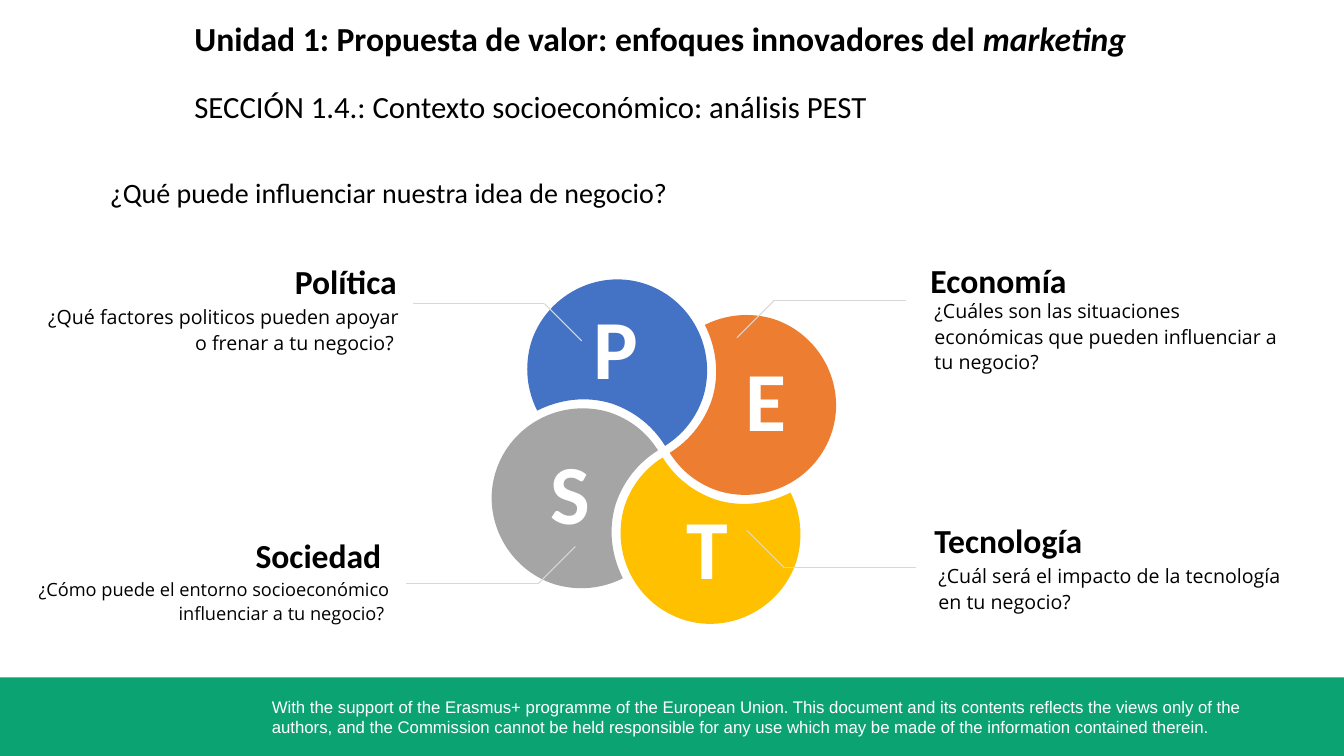
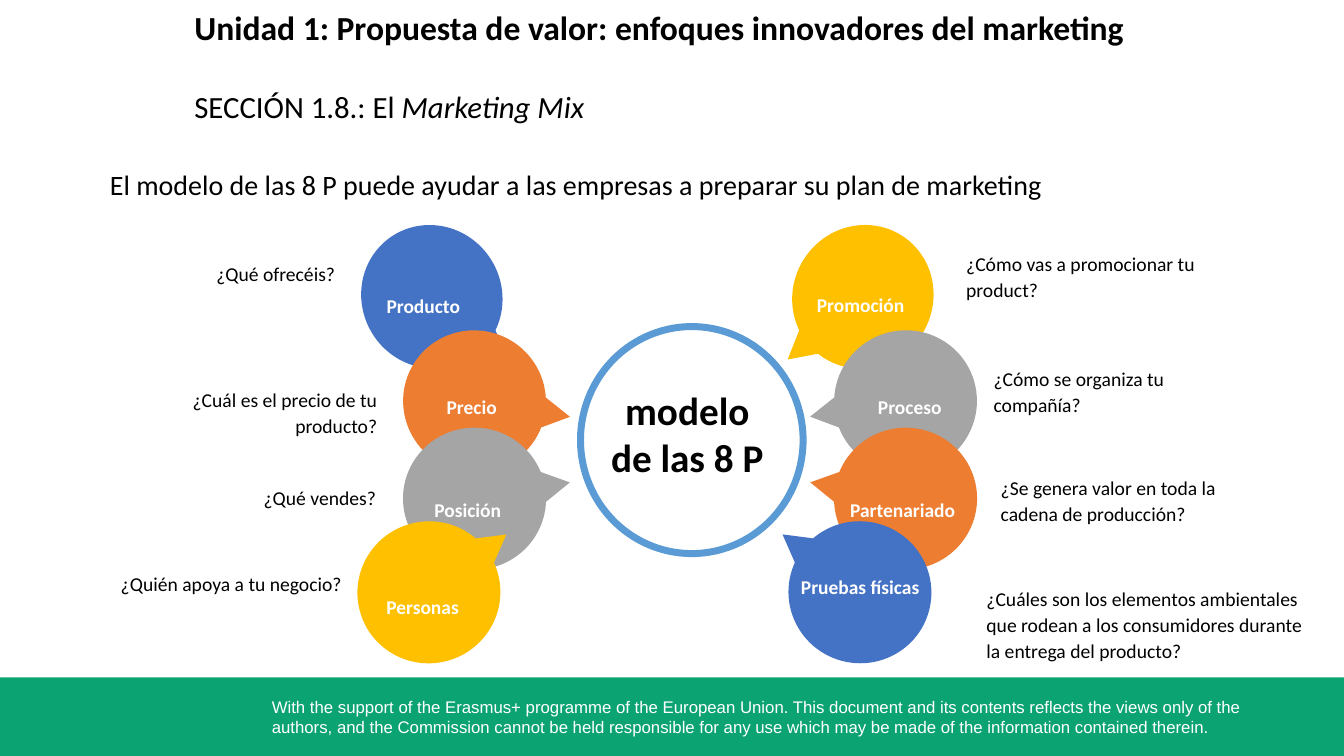
from dataclasses import dataclass

from lxml.etree import SubElement
from pptx import Presentation
from pptx.dml.color import RGBColor
from pptx.enum.shapes import MSO_CONNECTOR, MSO_SHAPE
from pptx.enum.text import MSO_AUTO_SIZE, PP_ALIGN
from pptx.oxml.ns import qn
from pptx.shapes.autoshape import Shape
from pptx.slide import Slide
from pptx.util import Cm, Pt


@dataclass(frozen=True)
class Theme:
    black: str = "000000"
    white: str = "FFFFFF"
    green: str = "0CA373"
    blue: str = "4472C4"
    orange: str = "ED7D31"
    yellow: str = "FFC000"
    gray: str = "A5A5A5"
    ring: str = "5B9BD5"
    leader: str = "D8D8D8"
    heading_size: float = 24
    section_size: float = 22
    lead_size: float = 20
    body_size: float = 14
    small_size: float = 13
    footer_size: float = 12
    letter_size: float = 60
    center_size: float = 28
    leader_width: float = 0.75
    outline_width: float = 5


THEME = Theme()


@dataclass(frozen=True)
class Box:
    left: float
    top: float
    width: float
    height: float

    def lengths(self) -> tuple[Cm, ...]:
        return tuple(Cm(value) for value in (self.left, self.top, self.width, self.height))


@dataclass(frozen=True)
class TextStyle:
    size: float
    color: str = THEME.black
    bold: bool = False
    font: str = "Calibri"
    align: PP_ALIGN = PP_ALIGN.LEFT
    line_spacing: float | None = None
    grow: bool = True
    raised: bool = False
    flush: bool = False


@dataclass(frozen=True)
class Words:
    text: str
    italic: bool = False


@dataclass(frozen=True)
class Header:
    title: tuple[Words, ...]
    title_top: float
    section: tuple[Words, ...]
    lead: str
    lead_top: float


@dataclass(frozen=True)
class Factor:
    """One PEST petal with its letter, leader line, heading and question."""
    letter: str
    color: str
    letter_at: tuple[float, float]
    tip: tuple[float, float]
    direction: tuple[int, int]
    heading: str
    heading_box: Box
    question: str
    question_at: tuple[float, float]
    question_size: float = THEME.body_size


@dataclass(frozen=True)
class Callout:
    left: float
    top: float
    rotation: float
    left_color: str
    right_color: str
    width: float = 3.4
    height: float = 3.43


@dataclass(frozen=True)
class Element:
    """One of the eight P: a label on its callout and a question beside it."""
    label: str
    label_at: tuple[float, float]
    question: str
    question_at: tuple[float, float]
    align: PP_ALIGN = PP_ALIGN.LEFT
    question_width: float = 6.76


TITLE = TextStyle(THEME.heading_size, bold=True, flush=True)
SECTION = TextStyle(THEME.section_size, flush=True)
LEAD = TextStyle(THEME.lead_size)
FOOTER = TextStyle(THEME.footer_size, THEME.white, font="Arial")
LETTER = TextStyle(THEME.letter_size, THEME.white, bold=True, align=PP_ALIGN.CENTER)
LABEL = TextStyle(THEME.heading_size, THEME.white, bold=True, align=PP_ALIGN.CENTER, raised=True)
CENTER = TextStyle(THEME.center_size, bold=True, align=PP_ALIGN.CENTER)

FOOTER_TEXT = (
    "With the support of the Erasmus+ programme of the European Union. This document and its "
    "contents reflects the views only of the authors, and the Commission cannot be held "
    "responsible for any use which may be made of the information contained therein."
)

PEST_HEADER = Header(
    (Words("Unidad 1: Propuesta de valor: enfoques innovadores del "), Words("marketing", True)), 0.41,
    (Words("SECCIÓN 1.4.: Contexto socioeconómico: análisis PEST"),),
    "¿Qué puede influenciar nuestra idea de negocio?", 4.29,
)
MIX_HEADER = Header(
    (Words("Unidad 1: Propuesta de valor: enfoques innovadores del marketing"),), 0.13,
    (Words("SECCIÓN 1.8.: El "), Words("Marketing Mix", True)),
    "El modelo de las 8 P puede ayudar a las empresas a preparar su plan de marketing", 4.09,
)

# Clockwise, a quarter turn apart.
FACTORS = (
    Factor("P", THEME.blue, (14, 7.32), (14.66, 8.59), (-1, -1),
           "Política", Box(6.92, 6.45, 3.33, 1.27),
           "¿Qué factores politicos pueden apoyar o frenar a tu negocio? ", (0.86, 7.5)),
    Factor("E", THEME.orange, (17.78, 8.62), (18.57, 8.51), (1, -1),
           "Economía", Box(23.2, 6.43, 4.72, 1.27),
           "¿Cuáles son las situaciones económicas que pueden influenciar a tu negocio?", (23.3, 7.34)),
    Factor("T", THEME.yellow, (16.31, 12.35), (18.82, 13.36), (1, 1),
           "Tecnología", Box(23.3, 12.98, 5.28, 1.27),
           "¿Cuál será el impacto de la tecnología en tu negocio?", (23.4, 14.02)),
    Factor("S", THEME.gray, (12.85, 10.97), (14.5, 13.77), (-1, 1),
           "Sociedad", Box(5.95, 13.36, 3.91, 1.27),
           "¿Cómo puede el entorno socioeconómico influenciar a tu negocio? ", (0.6, 14.4),
           THEME.small_size),
)
FLOWER_CENTER = (16.73, 11.37)
FIRST_PETAL_OFFSET = (-1.12, -2.27)
FIRST_PETAL_ROTATION = 323.2
PETAL_START = (-0.79, 0.74)
# Each row holds two control points and the end of one curve, from the petal's centre.
PETAL_CURVES = (
    ((-0.44, 1.25), (-0.3, 1.83), (-0.35, 2.4)),
    ((0.17, 2.44), (0.69, 2.32), (1.17, 1.98)),
    ((2.17, 1.23), (2.4, -0.18), (1.67, -1.2)),
    ((0.94, -2.21), (-0.49, -2.42), (-1.49, -1.71)),
    ((-2, -1.33), (-2.3, -0.8), (-2.4, -0.24)),
    ((-1.79, -0.13), (-1.2, 0.18), PETAL_START),
)
LEADER_SLANT = 0.94
LEADER_LENGTH = 3.32

CALLOUTS = (
    Callout(20.07, 5.74, 32.4, THEME.blue, THEME.yellow, 3.35, 3.48),
    Callout(21.12, 8.4, 62.6, THEME.orange, THEME.gray),
    Callout(21.12, 10.85, 81.4, THEME.gray, THEME.orange),
    Callout(19.97, 13.21, 108.5, THEME.yellow, THEME.blue),
)
CALLOUT_SHIFT = 10.86
CALLOUT_TAIL = (0.208, 0.625)

ELEMENTS = (
    Element("Producto", (8.89, 7.19), "¿Qué ofrecéis?", (1.94, 6.41), PP_ALIGN.RIGHT),
    Element("Precio", (10.11, 9.73), "¿Cuál es el precio de tu producto?", (3, 9.6), PP_ALIGN.RIGHT),
    Element("Posición", (10.01, 12.32), "¿Qué vendes?", (2.97, 12.07), PP_ALIGN.RIGHT),
    Element("Personas", (8.87, 14.78), "¿Quién apoya a tu negocio?", (2.11, 14.22), PP_ALIGN.RIGHT),
    Element("Promoción", (19.91, 7.16), "¿Cómo vas a promocionar tu product?", (24.1, 6.16)),
    Element("Proceso", (21.15, 9.73), "¿Cómo se organiza tu compañía?", (24.79, 9.07)),
    Element("Partenariado", (20.97, 12.32),
            "¿Se genera valor en toda la cadena de producción?", (24.97, 11.81)),
    Element("Pruebas físicas", (19.9, 14.27),
            "¿Cuáles son los elementos ambientales que rodean a los consumidores "
            "durante la entrega del producto?", (24.61, 14.61), question_width=8.64),
)


def set_attributes(target: object, values: dict[str, object]) -> None:
    for name, value in values.items():
        setattr(target, name, value)


def add_text(slide: Slide, box: Box, content: str | tuple[Words, ...], style: TextStyle) -> None:
    frame = slide.shapes.add_textbox(*box.lengths()).text_frame
    auto_size = MSO_AUTO_SIZE.SHAPE_TO_FIT_TEXT if style.grow else MSO_AUTO_SIZE.NONE
    set_attributes(frame, {"word_wrap": True, "auto_size": auto_size})
    if style.flush:
        set_attributes(frame, {"margin_left": 0, "margin_right": 0,
                               "margin_top": Cm(0.04), "margin_bottom": 0})
    paragraph = frame.paragraphs[0]
    set_attributes(paragraph, {"alignment": style.align, "line_spacing": style.line_spacing})
    for words in (Words(content),) if isinstance(content, str) else content:
        run = paragraph.add_run()
        run.text = words.text
        set_attributes(run.font, {"name": style.font, "size": Pt(style.size),
                                  "bold": style.bold, "italic": words.italic})
        run.font.color.rgb = RGBColor.from_string(style.color)
        if style.raised:
            run._r.get_or_add_rPr().set("baseline", "30000")


def paint(shape: Shape, fill: str, outline: str | None = None) -> None:
    shape.shadow.inherit = False
    shape.fill.solid()
    shape.fill.fore_color.rgb = RGBColor.from_string(fill)
    if outline is None:
        shape.line.fill.background()
    else:
        shape.line.color.rgb = RGBColor.from_string(outline)
        shape.line.width = Pt(THEME.outline_width)
        SubElement(shape._element.spPr.find(qn("a:ln")), qn("a:miter"), lim="800000")


def add_line(slide: Slide, start: tuple[float, float], end: tuple[float, float]) -> None:
    line = slide.shapes.add_connector(MSO_CONNECTOR.STRAIGHT, *(Cm(value) for value in start + end))
    line.line.color.rgb = RGBColor.from_string(THEME.leader)
    line.line.width = Pt(THEME.leader_width)
    SubElement(line._element.spPr, qn("a:effectLst"))


def curve_segments(shape: Shape) -> None:
    """Turn each three straight segments of a freeform into one cubic curve."""
    segments = list(shape._element.iter(qn("a:lnTo")))
    for first in range(0, len(segments), 3):
        curve = segments[first].makeelement(qn("a:cubicBezTo"))
        segments[first].addprevious(curve)
        for segment in segments[first:first + 3]:
            curve.append(segment[0])
            segment.getparent().remove(segment)


def add_petal(slide: Slide, center: tuple[float, float], rotation: float, color: str) -> None:
    builder = slide.shapes.build_freeform(*(Cm(value) for value in PETAL_START))
    builder.add_line_segments([(Cm(x), Cm(y)) for curve in PETAL_CURVES for x, y in curve], close=True)
    petal = builder.convert_to_shape(*(Cm(value) for value in center))
    curve_segments(petal)
    petal.rotation = rotation
    paint(petal, color)


def add_frame(slide: Slide, header: Header) -> None:
    """Add the footer band and the headings that every slide has."""
    band = slide.shapes.add_shape(MSO_SHAPE.RECTANGLE, *Box(0, 17.07, 33.87, 1.98).lengths())
    paint(band, THEME.green)
    add_text(slide, Box(6.6, 17.42, 26.47, 1.27), FOOTER_TEXT, FOOTER)
    add_text(slide, Box(4.9, 2.18, 26.52, 0.99), header.section, SECTION)
    add_text(slide, Box(4.9, header.title_top, 28.9, 1.07), header.title, TITLE)
    add_text(slide, Box(2.52, header.lead_top, 26.11, 1.12), header.lead, LEAD)


def add_pest(slide: Slide) -> None:
    across, down = FIRST_PETAL_OFFSET
    for index, factor in enumerate(FACTORS):
        center = (FLOWER_CENTER[0] + across, FLOWER_CENTER[1] + down)
        add_petal(slide, center, (FIRST_PETAL_ROTATION + 90 * index) % 360, factor.color)
        across, down = -down, across
    for factor in FACTORS:
        add_text(slide, Box(*factor.letter_at, 3.05, 2.82), factor.letter, LETTER)
        horizontal, vertical = factor.direction
        elbow = (factor.tip[0] + LEADER_SLANT * horizontal, factor.tip[1] + LEADER_SLANT * vertical)
        add_line(slide, factor.tip, elbow)
        add_line(slide, elbow, (elbow[0] + LEADER_LENGTH * horizontal, elbow[1]))
        align = PP_ALIGN.RIGHT if horizontal < 0 else PP_ALIGN.LEFT
        add_text(slide, Box(*factor.question_at, 9.45, 2.03), factor.question,
                 TextStyle(factor.question_size, font="Open Sans", align=align,
                           line_spacing=1.1, grow=False))
        add_text(slide, factor.heading_box, factor.heading,
                 TextStyle(THEME.heading_size, bold=True, align=align))


def add_callout(slide: Slide, callout: Callout, mirrored: bool) -> None:
    left = callout.left - CALLOUT_SHIFT if mirrored else callout.left
    box = Box(left, callout.top, callout.width, callout.height)
    shape = slide.shapes.add_shape(MSO_SHAPE.OVAL_CALLOUT, *box.lengths())
    shape.adjustments[0] = CALLOUT_TAIL[0] if mirrored else -CALLOUT_TAIL[0]
    shape.adjustments[1] = CALLOUT_TAIL[1]
    shape.rotation = 360 - callout.rotation if mirrored else callout.rotation
    color = callout.left_color if mirrored else callout.right_color
    paint(shape, color, color)


def add_marketing_mix(slide: Slide) -> None:
    ring = slide.shapes.add_shape(MSO_SHAPE.OVAL, *Box(14.63, 8.23, 5.61, 5.72).lengths())
    paint(ring, THEME.white, THEME.ring)
    for mirrored in (False, True):
        for callout in CALLOUTS:
            add_callout(slide, callout, mirrored)
    for element in ELEMENTS:
        add_text(slide, Box(*element.label_at, 3.56, 0.94), element.label, LABEL)
        add_text(slide, Box(*element.question_at, element.question_width, 1.47), element.question,
                 TextStyle(THEME.body_size, align=element.align, line_spacing=1.1, grow=False))
    add_text(slide, Box(15.06, 9.6, 4.52, 2.64), "modelo de las 8 P", CENTER)


def main() -> None:
    presentation = Presentation()
    set_attributes(presentation, {"slide_width": Cm(33.87), "slide_height": Cm(19.05)})
    for header, add_content in ((PEST_HEADER, add_pest), (MIX_HEADER, add_marketing_mix)):
        slide = presentation.slides.add_slide(presentation.slide_layouts[6])
        add_frame(slide, header)
        add_content(slide)
    presentation.save("out.pptx")


if __name__ == "__main__":
    main()
